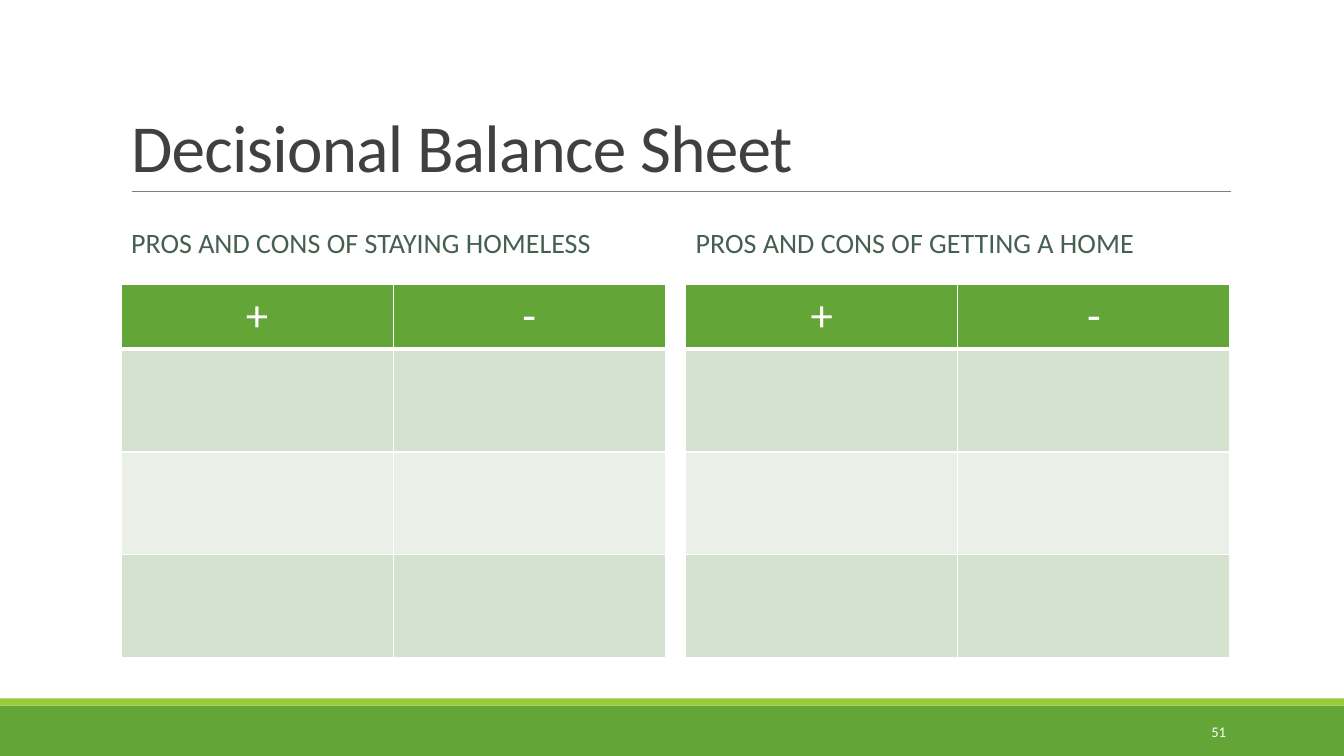
from dataclasses import dataclass

from lxml import etree
from pptx import Presentation
from pptx import util as u
from pptx.dml import color
from pptx.enum import shapes, text
from pptx.oxml import ns

PX = 9144  # EMU in one px, 100 px to the inch
SLIDE_W, SLIDE_H = 1333, 750
COMPARISON_LAYOUT = 4


@dataclass(frozen=True)
class Theme:
    font: str = "Calibri"
    green: str = "63A537"
    lime: str = "99CB38"
    rule: str = "808080"
    title: str = "404040"
    heading: str = "455F51"
    white: str = "FFFFFF"
    bands: tuple = ("D3E1CE", "EAF0E8")
    title_pt: float = 48
    heading_pt: float = 20
    sign_pt: float = 32
    number_pt: float = 10.5


def rgb(value):
    return color.RGBColor.from_string(value)


class SlideBuilder:
    def __init__(self, prs, theme):
        self.theme = theme
        self.slide = prs.slides.add_slide(prs.slide_layouts[COMPARISON_LAYOUT])

    def add_words(self, tf, words, size, ink, **formats):
        p = tf.paragraphs[0]
        for name, value in formats.items():
            setattr(p, name, value)
        r = p.add_run()
        r.text = words
        font = {"name": self.theme.font, "size": u.Pt(size), "bold": False}
        for name, value in font.items():
            setattr(r.font, name, value)
        r.font.color.rgb = rgb(ink)
        return r

    def frame(self, sp, anchor):
        tf = sp.text_frame
        settings = {"word_wrap": True, "auto_size": text.MSO_AUTO_SIZE.NONE,
                    "vertical_anchor": anchor}
        for name, value in settings.items():
            setattr(tf, name, value)
        return tf

    def placeholder(self, idx, box, anchor):
        sp = self.slide.placeholders[idx]
        for name, value in zip(("left", "top", "width", "height"), box):
            setattr(sp, name, value * PX)
        return self.frame(sp, anchor)

    def title(self, words, *box):
        tf = self.placeholder(0, box, text.MSO_ANCHOR.BOTTOM)
        r = self.add_words(tf, words, self.theme.title_pt, self.theme.title,
                           line_spacing=0.85, alignment=text.PP_ALIGN.LEFT)
        r.font._element.set("spc", "-50")

    def heading(self, idx, words, *box):
        tf = self.placeholder(idx, box, text.MSO_ANCHOR.MIDDLE)
        self.add_words(tf, words, self.theme.heading_pt, self.theme.heading,
                       line_spacing=0.9, space_before=u.Pt(0), space_after=u.Pt(2))

    def band(self, fill, *box):
        sp = self.slide.shapes.add_shape(shapes.MSO_SHAPE.RECTANGLE,
                                         *(v * PX for v in box))
        sp.shadow.inherit = False
        sp.fill.solid()
        sp.fill.fore_color.rgb = rgb(fill)
        sp.line.fill.background()

    def rule(self, *ends):
        line = self.slide.shapes.add_connector(shapes.MSO_CONNECTOR.STRAIGHT,
                                               *(v * PX for v in ends))
        line.line.color.rgb = rgb(self.theme.rule)
        line.line.width = u.Pt(0.5)
        etree.SubElement(line._element.spPr, ns.qn("a:effectLst"))

    def number(self, words, *box):
        sp = self.slide.shapes.add_textbox(*(v * PX for v in box))
        tf = self.frame(sp, text.MSO_ANCHOR.MIDDLE)
        self.add_words(tf, words, self.theme.number_pt, self.theme.white,
                       alignment=text.PP_ALIGN.RIGHT)

    def style_cell(self, cell, fill, bottom):
        tcPr = cell._tc.get_or_add_tcPr()
        for side, points in (("L", 1), ("R", 1), ("T", 1), ("B", bottom)):
            ln = etree.SubElement(tcPr, ns.qn(f"a:ln{side}"), w=str(u.Pt(points)))
            solid = etree.SubElement(ln, ns.qn("a:solidFill"))
            etree.SubElement(solid, ns.qn("a:srgbClr"), val=self.theme.white)
        cell.fill.solid()
        cell.fill.fore_color.rgb = rgb(fill)

    def balance_table(self, signs, heights, left, top, width):
        table = self.slide.shapes.add_table(
            len(heights), len(signs), left * PX, top * PX,
            width * PX, sum(heights) * PX).table
        table.horz_banding = False
        for column in table.columns:
            column.width = width * PX // len(signs)
        for row, height in enumerate(heights):
            table.rows[row].height = height * PX
            for col, sign in enumerate(signs):
                cell = table.cell(row, col)
                if row == 0:
                    self.style_cell(cell, self.theme.green, 3)
                    self.add_words(cell.text_frame, sign, self.theme.sign_pt,
                                   self.theme.white, alignment=text.PP_ALIGN.CENTER)
                else:
                    self.style_cell(cell, self.theme.bands[(row - 1) % 2], 1)

    def drop_empty_placeholders(self):
        for sp in list(self.slide.placeholders):
            if not sp.text_frame.text:
                sp._element.getparent().remove(sp._element)


def main():
    prs = Presentation()
    prs.slide_width, prs.slide_height = SLIDE_W * PX, SLIDE_H * PX
    theme = Theme()
    s = SlideBuilder(prs, theme)

    # Footer bands and title rule
    s.band(theme.green, 0, 700, SLIDE_W, 50)
    s.band(theme.lime, 0, 693, SLIDE_W, 7)
    s.rule(131, 190, 1221, 190)

    # Title
    s.title("Decisional Balance Sheet", 120, 31, 1100, 159)

    # Two columns, each a heading over its table
    left, width, gap = 120, 540, 20
    headings = {1: "PROS AND CONS OF STAYING HOMELESS",
                3: "PROS AND CONS OF GETTING A HOME"}
    for column, (idx, words) in enumerate(headings.items()):
        x = left + column * (width + gap)
        s.heading(idx, words, x, 202, width, 81)
        s.balance_table("+-", [64] + [102] * 3, x, 282, width)

    # Slide number
    s.number("51", 1083, 706, 143, 40)

    s.drop_empty_placeholders()
    prs.save("out.pptx")


if __name__ == "__main__":
    main()
